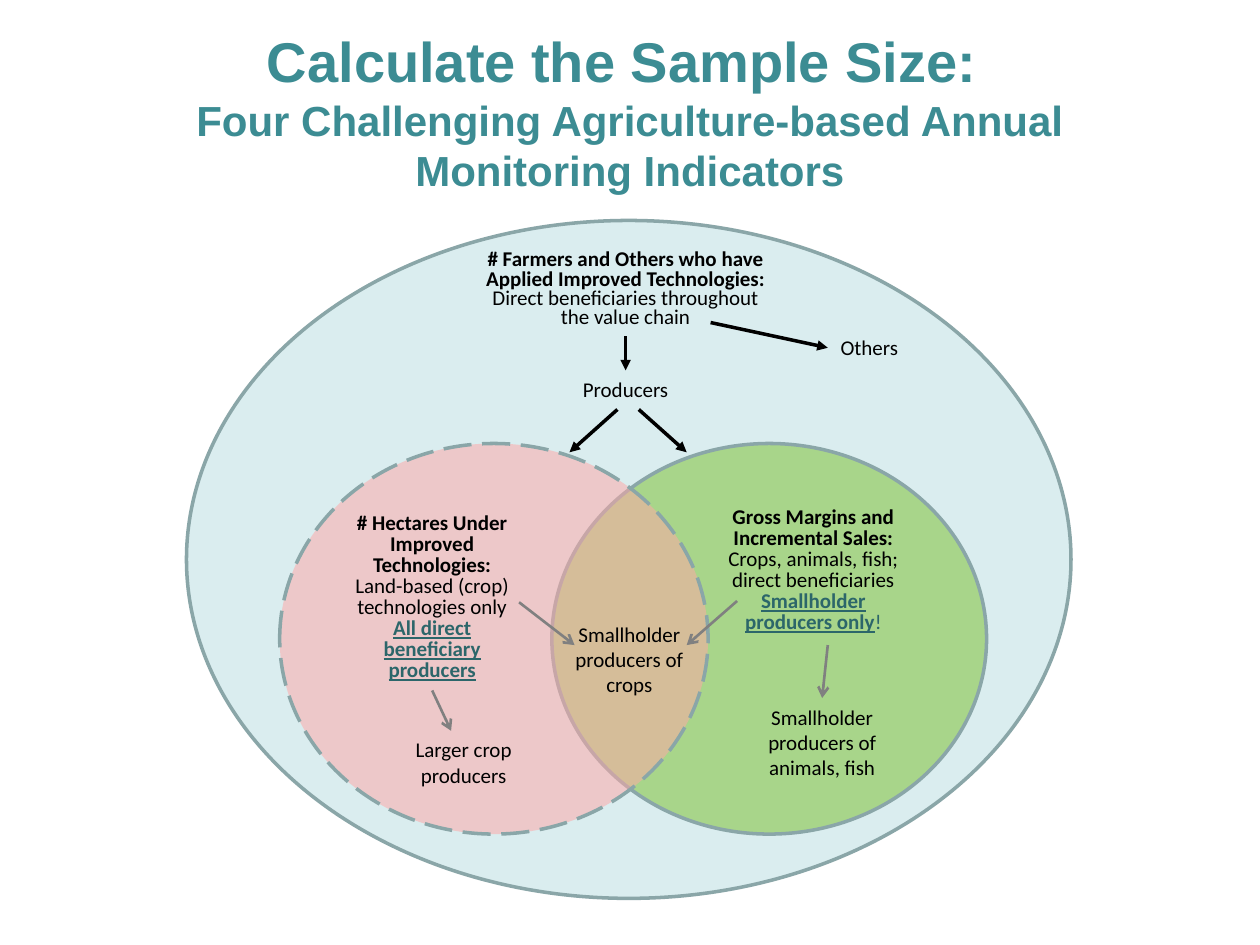
from dataclasses import dataclass
from typing import Optional

from lxml.etree import SubElement
from pptx import Presentation
from pptx.dml.color import RGBColor
from pptx.enum.dml import MSO_LINE
from pptx.enum.shapes import MSO_CONNECTOR, MSO_SHAPE
from pptx.enum.text import MSO_ANCHOR, MSO_AUTO_SIZE, PP_ALIGN
from pptx.oxml.ns import qn
from pptx.util import Inches, Pt

HUES = {
    "title": "3C8C93", "text": "000000", "key": "2C666A", "rim": "8AA6A8",
    "all": "DAEDEF", "sales": "7EC135", "land": "FFA7A7", "gray": "808080",
}


@dataclass
class Run:
    text: str
    bold: bool = False
    hue: str = "text"
    under: bool = False
    size: int = 12
    font: str = "Calibri"


@dataclass
class Oval:
    box: tuple
    hue: str
    alpha: int = 100
    dash: Optional[MSO_LINE] = None


@dataclass
class Label:
    name: str
    box: tuple
    paras: list
    lead: Optional[int] = None
    wrap: bool = True


@dataclass
class Arrow:
    start: tuple
    end: tuple
    hue: str = "text"
    tail: Optional[tuple] = None
    head: Optional[tuple] = None


def title_run(text: str, size: int) -> Run:
    """Return a bold heading run."""
    return Run(text, True, "title", size=size, font="Arial")


OVALS = [
    Oval((1.48, 1.75, 7.02, 5.38), "all"),
    Oval((4.38, 3.52, 3.45, 3.1), "sales", 54),
    Oval((2.22, 3.52, 3.4, 3.1), "land", 52, MSO_LINE.LONG_DASH),
]
LABELS = [
    Label("farmers", (3.73, 1.95, 2.47, 0.72), [
        [Run("# Farmers and Others who have Applied Improved Technologies:", True)],
        [Run("Direct beneficiaries throughout the value chain")],
    ], 11),
    Label("sales", (5.65, 3.98, 1.61, 1.11), [
        [Run("Gross Margins and Incremental Sales:", True)],
        [Run("Crops, animals, fish; direct beneficiaries "),
         Run("Smallholder producers only", True, "key", True),
         Run("!", hue="key")],
    ], 12),
    Label("land", (2.65, 4.03, 1.56, 1.45), [
        [Run("# Hectares Under Improved Technologies:", True)],
        [Run("Land-based (crop) technologies only")],
        [Run("All", True, "key", True), Run(" ", False, "key", True),
         Run("direct beneficiary producers", True, "key", True)],
    ], 12),
    Label("crops", (4.36, 4.88, 1.27, 0.71), [[Run("Smallholder producers of crops")]]),
    Label("stock", (5.85, 5.54, 1.35, 0.71),
          [[Run("Smallholder producers of animals, fish")]]),
    Label("large", (3.13, 5.8, 1.1, 0.5), [[Run("Larger crop producers")]]),
    Label("makers", (4.52, 2.94, 0.89, 0.3), [[Run("Producers")]], wrap=False),
    Label("others", (6.57, 2.61, 0.66, 0.3), [[Run("Others")]], wrap=False),
]
ARROWS = [
    Arrow((4.97, 2.64), (4.97, 2.99), tail=("farmers", 2), head=("makers", 0)),
    Arrow((5.64, 2.56), (6.57, 2.72), head=("others", 1)),
    Arrow((4.9, 3.25), (4.52, 3.59)),
    Arrow((5.07, 3.25), (5.45, 3.59)),
    Arrow((6.57, 5.12), (6.53, 5.54), "gray", head=("stock", 0)),
    Arrow((3.45, 5.47), (3.58, 5.8), "gray", tail=("land", 2)),
    Arrow((5.85, 4.77), (5.45, 5.12), "gray"),
    Arrow((4.12, 4.78), (4.56, 5.12), "gray"),
]


def color(hue: str) -> RGBColor:
    """Look up a named colour."""
    return RGBColor.from_string(HUES[hue])


def add_oval(slide, oval: Oval) -> None:
    """Draw one set of the diagram."""
    shape = slide.shapes.add_shape(MSO_SHAPE.OVAL, *map(Inches, oval.box))
    shape.shadow.inherit = False
    shape.fill.solid()
    shape.fill.fore_color.rgb = color(oval.hue)
    if oval.alpha < 100:
        tint = shape.fill._xPr.find(".//" + qn("a:srgbClr"))
        SubElement(tint, qn("a:alpha"), val=str(oval.alpha * 1000))
    shape.line.color.rgb = color("rim")
    shape.line.width = Pt(2)
    if oval.dash is not None:
        shape.line.dash_style = oval.dash


def add_run(para, item: Run) -> None:
    """Append one styled run."""
    run = para.add_run()
    run.text = item.text
    font = run.font
    font.name, font.size = item.font, Pt(item.size)
    font.bold, font.underline = item.bold, item.under
    font.color.rgb = color(item.hue)


def add_label(slide, label: Label):
    """Place a centred label and return its box."""
    box = slide.shapes.add_textbox(*map(Inches, label.box))
    frame = box.text_frame
    frame.word_wrap = label.wrap
    frame.auto_size = MSO_AUTO_SIZE.SHAPE_TO_FIT_TEXT
    for num, items in enumerate(label.paras):
        para = frame.add_paragraph() if num else frame.paragraphs[0]
        para.alignment = PP_ALIGN.CENTER
        if label.lead:
            para.line_spacing = Pt(label.lead)
        for item in items:
            add_run(para, item)
    return box


def add_title(slide) -> None:
    """Place the two-part heading."""
    box = slide.shapes.add_textbox(*map(Inches, (0.75, 0.17, 8.5, 1.42)))
    frame = box.text_frame
    frame.word_wrap = True
    frame.vertical_anchor = MSO_ANCHOR.MIDDLE
    frame.margin_left = frame.margin_right = Inches(0.04)
    frame.margin_top = frame.margin_bottom = Inches(0.04)
    para = frame.paragraphs[0]
    para.alignment = PP_ALIGN.CENTER
    add_run(para, title_run("Calculate the Sample Size: ", 32))
    para.add_line_break()
    add_run(para, title_run(
        "Four Challenging Agriculture-based Annual Monitoring Indicators", 24))


def add_arrow(slide, arrow: Arrow, boxes: dict) -> None:
    """Draw an arrow, joined to boxes where it meets them."""
    ends = map(Inches, arrow.start + arrow.end)
    link = slide.shapes.add_connector(MSO_CONNECTOR.STRAIGHT, *ends)
    if arrow.tail:
        name, side = arrow.tail
        link.begin_connect(boxes[name], side)
    if arrow.head:
        name, side = arrow.head
        link.end_connect(boxes[name], side)
    gray = arrow.hue == "gray"
    link.line.color.rgb = color(arrow.hue)
    link.line.width = Pt(1.5 if gray else 2)
    SubElement(link.line._get_or_add_ln(), qn("a:tailEnd"),
               type="arrow" if gray else "triangle")
    SubElement(link._element.spPr, qn("a:effectLst"))


def main() -> None:
    """Build and save the slide."""
    deck = Presentation()
    deck.slide_width, deck.slide_height = Inches(10), Inches(7.5)
    slide = deck.slides.add_slide(deck.slide_layouts[6])
    for oval in OVALS:
        add_oval(slide, oval)
    add_title(slide)
    boxes = {label.name: add_label(slide, label) for label in LABELS}
    for arrow in ARROWS:
        add_arrow(slide, arrow, boxes)
    deck.save("out.pptx")


if __name__ == "__main__":
    main()
